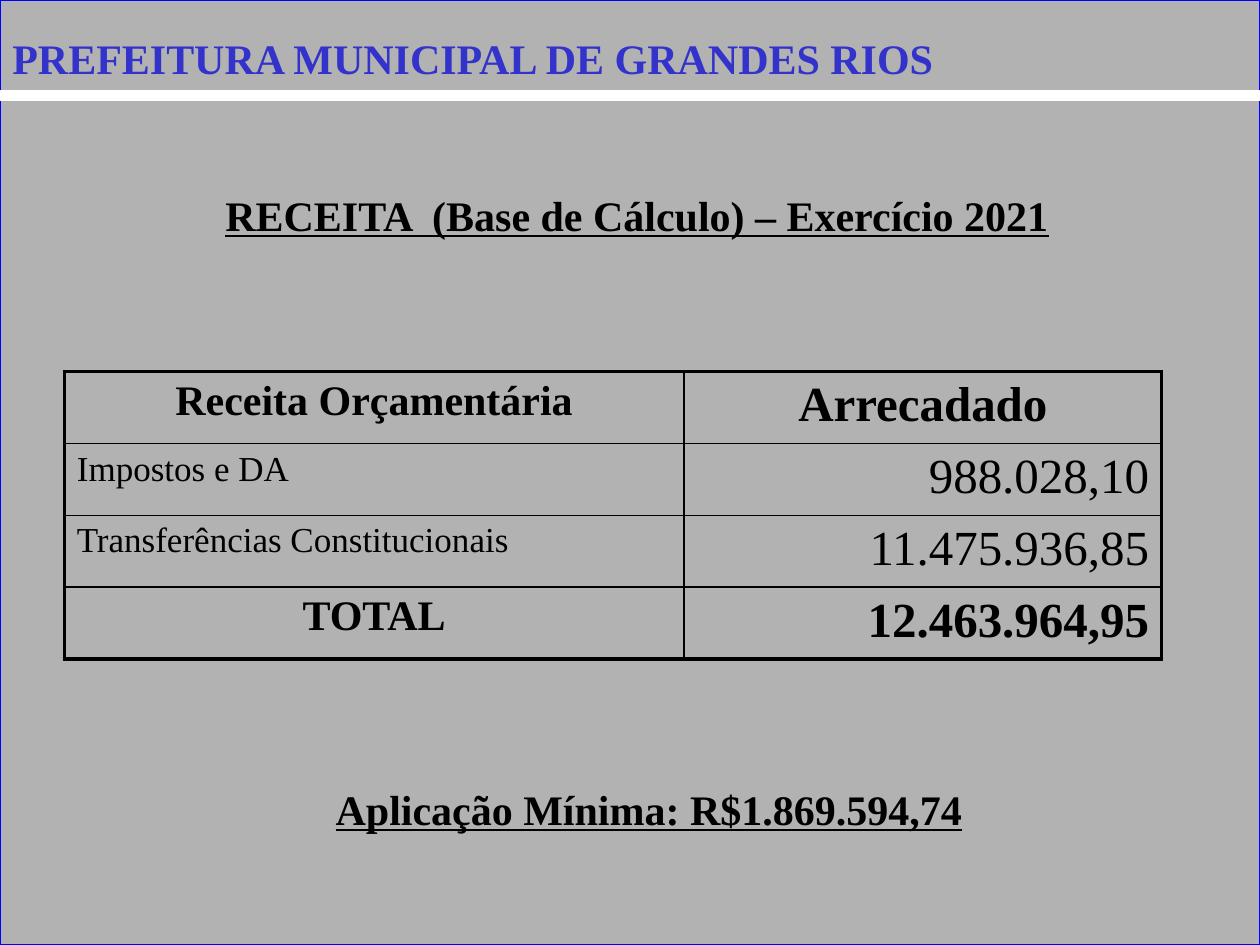
from lxml import etree
from pptx import Presentation
from pptx.dml.color import RGBColor
from pptx.enum import shapes, text
from pptx.oxml import ns
from pptx.util import Inches, Pt

COLORS = {
    "background": "B2B2B2",
    "frame": "0000FF",
    "rule": "FFFFFF",
    "heading": "3333CC",
    "shadow": "808080",
    "ink": "000000",
}
FONT = "Times New Roman"
LEFT, CENTER, RIGHT = text.PP_ALIGN.LEFT, text.PP_ALIGN.CENTER, text.PP_ALIGN.RIGHT
THIN, THICK = 1, 2.25

# Each cell: wording, size, bold, alignment
ROWS = [
    [("Receita Orçamentária", 24, True, CENTER), ("Arrecadado", 28, True, CENTER)],
    [("Impostos e DA", 20, False, LEFT), ("988.028,10", 28, False, RIGHT)],
    [("Transferências Constitucionais", 20, False, LEFT), ("11.475.936,85", 28, False, RIGHT)],
    [("TOTAL", 24, True, CENTER), ("12.463.964,95", 28, True, RIGHT)],
]
COLUMN_WIDTHS = [4.92, 3.79]
ROW_HEIGHT = 0.57


def rgb(name):
    return RGBColor.from_string(COLORS[name])


def add_child(parent, tag, **attributes):
    return etree.SubElement(parent, ns.qn(tag), attributes)


def write(frame, wording, size, bold=True, align=LEFT, color="ink", underline=False):
    paragraph = frame.paragraphs[0]
    paragraph.alignment = align
    run = paragraph.add_run()
    run.text = wording
    run.font.name = FONT
    run.font.size = Pt(size)
    run.font.bold = bold
    run.font.underline = underline
    run.font.color.rgb = rgb(color)
    return run


def add_text(slide, box, wording, **style):
    shape = slide.shapes.add_textbox(*map(Inches, box))
    shape.text_frame.word_wrap = True
    return shape, write(shape.text_frame, wording, 24, **style)


def add_text_shadow(run):
    fill = run.font.fill._xPr.find(ns.qn("a:solidFill"))
    effects = etree.Element(ns.qn("a:effectLst"))
    fill.addnext(effects)
    shadow = add_child(effects, "a:outerShdw", dist="35921", dir="2700000")
    add_child(shadow, "a:srgbClr", val=COLORS["shadow"])


def add_background(slide, width, height):
    panel = slide.shapes.add_shape(shapes.MSO_SHAPE.RECTANGLE, 0, 0, width, height)
    panel.shadow.inherit = False
    panel.fill.solid()
    panel.fill.fore_color.rgb = rgb("background")
    panel.line.color.rgb = rgb("frame")
    panel.line.width = Pt(0.75)


def add_rule(slide, top, width):
    rule = slide.shapes.add_connector(
        shapes.MSO_CONNECTOR.STRAIGHT, 0, Inches(top), width, Inches(top))
    rule.line.color.rgb = rgb("rule")
    rule.line.width = Pt(6)
    add_child(rule._element.spPr, "a:effectLst")


def set_borders(cell, widths):
    properties = cell._tc.get_or_add_tcPr()
    for index, (side, width) in enumerate(widths.items()):
        line = etree.Element(ns.qn("a:ln" + side), w=str(Pt(width)))
        fill = add_child(line, "a:solidFill")
        add_child(fill, "a:srgbClr", val=COLORS["ink"])
        properties.insert(index, line)


def add_revenue_table(slide, left, top):
    last_row, last_column = len(ROWS) - 1, len(COLUMN_WIDTHS) - 1
    table = slide.shapes.add_table(
        len(ROWS), len(COLUMN_WIDTHS), Inches(left), Inches(top),
        Inches(sum(COLUMN_WIDTHS)), Inches(ROW_HEIGHT * len(ROWS))).table
    table.first_row = table.horz_banding = False
    for column, width in zip(table.columns, COLUMN_WIDTHS):
        column.width = Inches(width)
    for r, row in enumerate(ROWS):
        table.rows[r].height = Inches(ROW_HEIGHT)
        for c, (wording, size, bold, align) in enumerate(row):
            cell = table.cell(r, c)
            cell.fill.background()
            write(cell.text_frame, wording, size, bold, align)
            # Thick on the outer edge, thin inside
            set_borders(cell, {
                "L": THICK if c == 0 else THIN,
                "R": THICK if c == last_column else THIN,
                "T": THICK if r == 0 else THIN,
                "B": THICK if r == last_row else THIN,
            })


def main():
    presentation = Presentation()
    presentation.slide_width = Inches(10)
    presentation.slide_height = Inches(7.5)
    slide = presentation.slides.add_slide(presentation.slide_layouts[6])

    # Background and header rule
    add_background(slide, presentation.slide_width, presentation.slide_height)
    add_rule(slide, 0.76, presentation.slide_width)

    # Section title, sitting at the foot of its box
    section, _ = add_text(slide, (0.98, 0.87, 8.15, 1.11),
                          "RECEITA  (Base de Cálculo) – Exercício 2021",
                          align=CENTER, underline=True)
    section.text_frame.vertical_anchor = text.MSO_ANCHOR.BOTTOM
    section.text_frame.margin_bottom = Inches(0.08)

    # Revenue table
    add_revenue_table(slide, 0.51, 2.95)

    # Header
    _, heading = add_text(slide, (0, 0.21, 8.23, 0.5),
                          "PREFEITURA MUNICIPAL DE GRANDES RIOS", color="heading")
    add_text_shadow(heading)

    # Minimum to be applied, set slightly left of centre
    minimum, _ = add_text(slide, (2.56, 6.17, 5.51, 0.5),
                          "Aplicação Mínima: R$1.869.594,74",
                          align=CENTER, underline=True)
    minimum.text_frame.margin_right = Inches(0.43)

    presentation.save("out.pptx")


if __name__ == "__main__":
    main()
